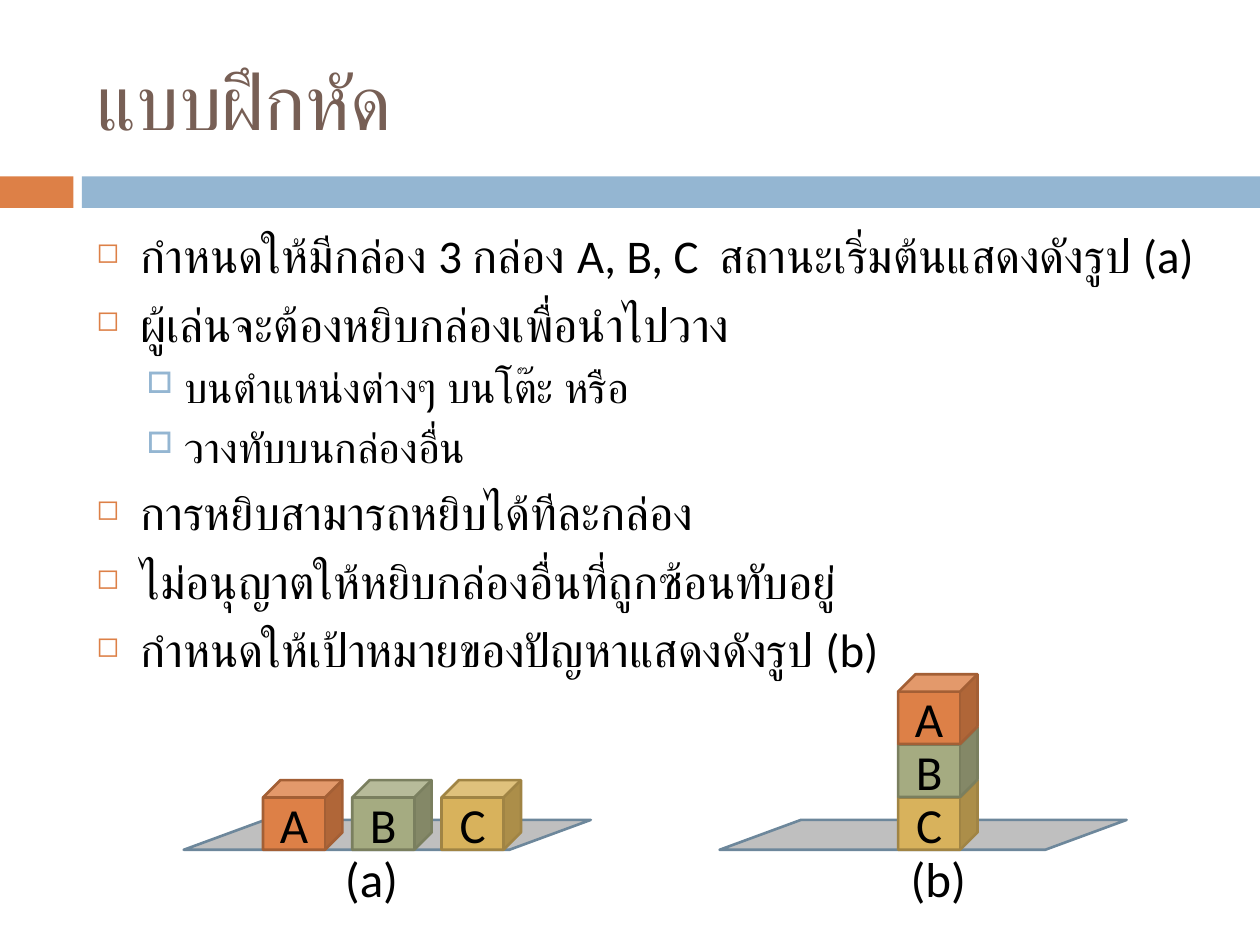
from pptx import Presentation
from pptx.dml.color import RGBColor
from pptx.enum.shapes import MSO_SHAPE as SHAPE
from pptx.enum.text import MSO_ANCHOR as ANCHOR, PP_ALIGN as ALIGN
from pptx.oxml.xmlchemy import OxmlElement
from pptx.util import Pt

FONT = "Calibri"
COLORS = {
    "title": "775F55", "text": "000000", "orange": "DD8047", "blue": "94B6D2",
    "table": "BFBFBF", "table_line": "6D879B",
}
# Box letter: fill, line
BOXES = {
    "A": ("DD8047", "A35F35"),
    "B": ("A5AB81", "7A7F5F"),
    "C": ("D8B25C", "A08444"),
}
# Level: size, space before, left indent, hanging, bullet, bullet colour, bullet %
LEVELS = [
    (26.8, 7, 25.2, 25.2, "◻", "orange", 60),
    (24.1, 5.5, 50.4, 21.6, "□", "blue", 70),
]
RULES = [
    (0, "กำหนดให้มีกล่อง 3 กล่อง A, B, C  สถานะเริ่มต้นแสดงดังรูป (a)"),
    (0, "ผู้เล่นจะต้องหยิบกล่องเพื่อนำไปวาง"),
    (1, "บนตำแหน่งต่างๆ บนโต๊ะ หรือ"),
    (1, "วางทับบนกล่องอื่น"),
    (0, "การหยิบสามารถหยิบได้ทีละกล่อง"),
    (0, "ไม่อนุญาตให้หยิบกล่องอื่นที่ถูกซ้อนทับอยู่"),
    (0, "กำหนดให้เป้าหมายของปัญหาแสดงดังรูป (b)"),
]
CUBE_W, CUBE_H = 45.4, 39.8
TABLE_W, TABLE_H = 232.6, 17.1


def rgb(value):
    return RGBColor.from_string(value)


def style(p, size, color="text"):
    p.font.name = FONT
    p.font.size = Pt(size)
    p.font.color.rgb = rgb(COLORS[color])


def add_shape(s, kind, box, fill, line=None):
    sp = s.shapes.add_shape(kind, *map(Pt, box))
    sp.shadow.inherit = False
    sp.fill.solid()
    sp.fill.fore_color.rgb = rgb(fill)
    if line:
        sp.line.color.rgb = rgb(line)
        sp.line.width = Pt(1.5)
    else:
        sp.line.fill.background()
    return sp


def add_bullet(p, left, hanging, char, color, percent):
    pPr = p._p.get_or_add_pPr()
    pPr.set("marL", str(Pt(left)))
    pPr.set("indent", str(-Pt(hanging)))
    bu_clr, bu_size, bu_char = map(OxmlElement, ("a:buClr", "a:buSzPct", "a:buChar"))
    srgb = OxmlElement("a:srgbClr")
    srgb.set("val", COLORS[color])
    bu_clr.append(srgb)
    bu_size.set("val", str(percent * 1000))
    bu_char.set("char", char)
    pPr.insert_element_before(bu_clr, "a:tabLst", "a:defRPr", "a:extLst")
    bu_clr.addnext(bu_size)
    bu_size.addnext(bu_char)


def add_header(s, box):
    """Title and the two-colour band below it."""
    title = s.shapes.title
    title.left, title.top, title.width, title.height = map(Pt, box)
    tf = title.text_frame
    tf.vertical_anchor = ANCHOR.MIDDLE
    tf.text = "แบบฝึกหัด"
    tf.paragraphs[0].alignment = ALIGN.LEFT
    style(tf.paragraphs[0], 44, "title")
    add_shape(s, SHAPE.RECTANGLE, (0, 100.8, 42, 18), COLORS["orange"])
    add_shape(s, SHAPE.RECTANGLE, (46.8, 100.8, 673.2, 18), COLORS["blue"])


def add_rules(s, box):
    """Bulleted rules of the exercise."""
    tf = s.shapes.add_textbox(*map(Pt, box)).text_frame
    tf.word_wrap = True
    for i, (level, text) in enumerate(RULES):
        size, before, *bullet = LEVELS[level]
        p = tf.paragraphs[0] if i == 0 else tf.add_paragraph()
        p.text = text
        p.level = level
        p.space_before = Pt(before)
        style(p, size)
        add_bullet(p, *bullet)


def add_cube(s, x, y, letter):
    sp = add_shape(s, SHAPE.CUBE, (x, y, CUBE_W, CUBE_H), *BOXES[letter])
    tf = sp.text_frame
    tf.vertical_anchor = ANCHOR.MIDDLE
    p = tf.paragraphs[0]
    p.text = letter
    p.alignment = ALIGN.CENTER
    style(p, 28)


def add_state(s, left, top, letters, first, step, caption, caption_x):
    """Table with cubes, each one step from the last, and a caption."""
    add_shape(s, SHAPE.FLOWCHART_DATA, (left, top, TABLE_W, TABLE_H),
              COLORS["table"], COLORS["table_line"])
    for i, letter in enumerate(letters):
        add_cube(s, left + first + i * step[0],
                 top + TABLE_H - CUBE_H + i * step[1], letter)
    tf = s.shapes.add_textbox(Pt(left + caption_x), Pt(top + 12.6),
                              Pt(56.9), Pt(41)).text_frame
    tf.word_wrap = True
    tf.text = caption
    style(tf.paragraphs[0], 28)


def main():
    prs = Presentation()
    prs.slide_width, prs.slide_height = Pt(720), Pt(540)
    s = prs.slides.add_slide(prs.slide_layouts[5])
    add_header(s, (48, 18, 642, 78))
    add_rules(s, (48, 126, 642, 246))
    # Start state in a row, goal state in a stack
    add_state(s, 105, 468.5, "ABC", 45.3, (51, 0), "(a)", 85)
    add_state(s, 411.2, 468.5, "CBA", 102, (0, -30.25), "(b)", 102)
    prs.save("out.pptx")


if __name__ == "__main__":
    main()
